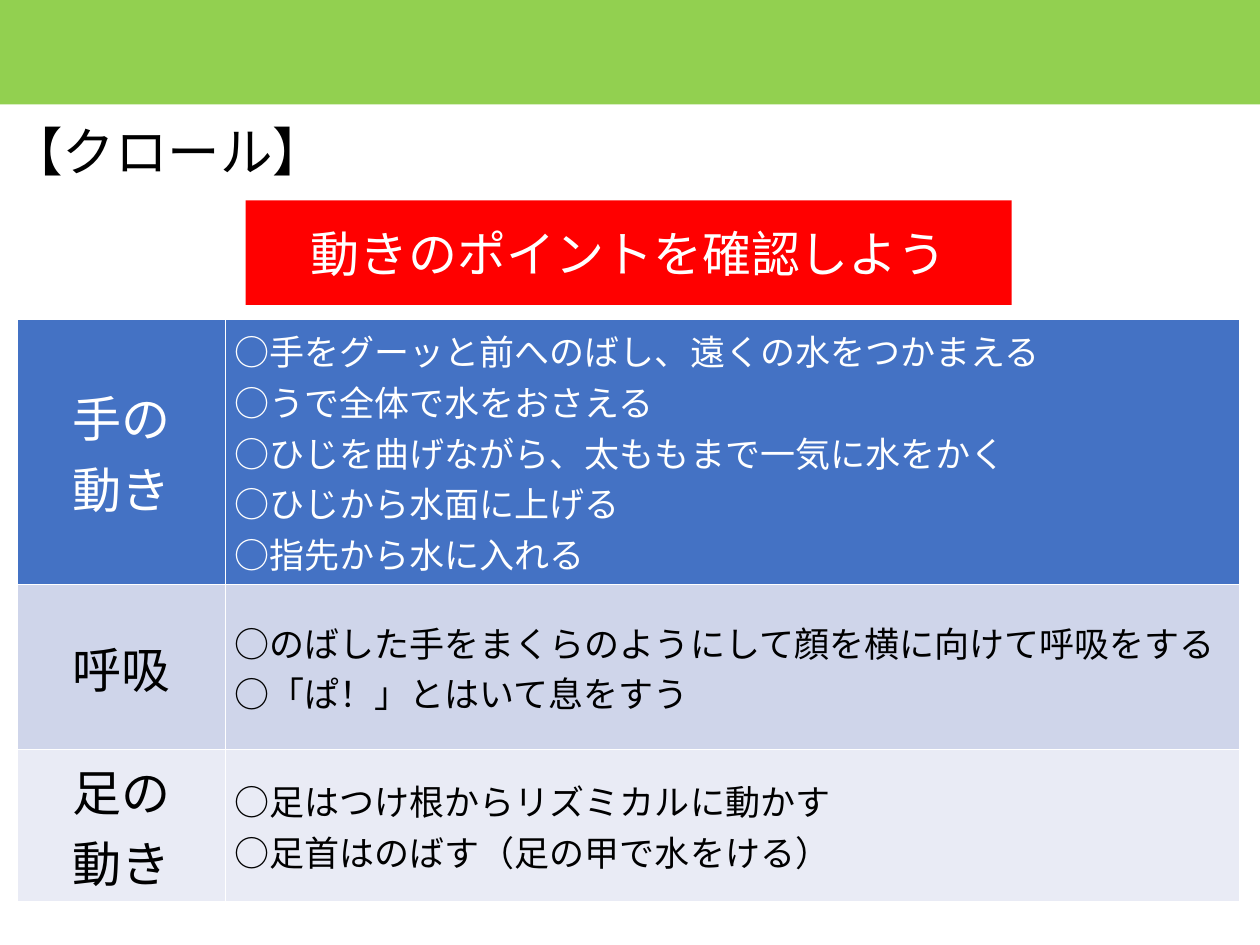
from lxml.etree import SubElement
from pptx import Presentation
from pptx.dml.color import RGBColor
from pptx.enum.shapes import MSO_SHAPE
from pptx.enum.text import MSO_ANCHOR, MSO_AUTO_SIZE, PP_ALIGN
from pptx.oxml.ns import qn
from pptx.util import Inches, Pt

FONT = "Noto Sans CJK JP"
COLORS = {"green": "92D050", "red": "FF0000", "blue": "4472C4",
          "pale": "CFD5EA", "paler": "E9EBF5", "white": "FFFFFF", "black": "000000"}

STROKE = "【クロール】"
CALL = "動きのポイントを確認しよう"
POINTS = [  # heading lines, point lines, row height, fill, text colour
    (["手の", "動き"],
     ["○手をグーッと前へのばし、遠くの水をつかまえる",
      "○うで全体で水をおさえる",
      "○ひじを曲げながら、太ももまで一気に水をかく",
      "○ひじから水面に上げる",
      "○指先から水に入れる"], 2.11, "blue", "white"),
    (["呼吸"],
     ["○のばした手をまくらのようにして顔を横に向けて呼吸をする",
      "○「ぱ！」とはいて息をすう"], 1.31, "pale", "black"),
    (["足の", "動き"],
     ["○足はつけ根からリズミカルに動かす",
      "○足首はのばす（足の甲で水をける）"], 1.15, "paler", "black"),
]
COLUMN_WIDTHS = (1.65, 8.05)


def rgb(name):
    return RGBColor.from_string(COLORS[name])


def write(frame, lines, size, color, align=PP_ALIGN.LEFT):
    frame.word_wrap = True
    for number, line in enumerate(lines):
        paragraph = frame.paragraphs[0] if number == 0 else frame.add_paragraph()
        paragraph.alignment = align
        run = paragraph.add_run()
        run.text = line
        run.font.size = Pt(size)
        run.font.bold = False
        run.font.name = FONT
        run.font.color.rgb = rgb(color)
        # Japanese characters take the East Asian typeface
        SubElement(run.font._element, qn("a:ea"), typeface=FONT)


def add_band(slide, left, top, width, height, color):
    band = slide.shapes.add_shape(MSO_SHAPE.RECTANGLE, Inches(left), Inches(top),
                                  Inches(width), Inches(height))
    band.shadow.inherit = False
    band.fill.solid()
    band.fill.fore_color.rgb = rgb(color)
    band.line.fill.background()
    return band


def add_title(slide):
    title = slide.shapes.title
    title.left, title.top = Inches(-0.02), Inches(0.92)
    title.width, title.height = Inches(3.16), Inches(0.55)
    title.fill.solid()
    title.fill.fore_color.rgb = rgb("white")
    title.text_frame.auto_size = MSO_AUTO_SIZE.NONE
    title.text_frame.vertical_anchor = MSO_ANCHOR.MIDDLE
    write(title.text_frame, [STROKE], 30, "black")


def add_points(slide):
    table = slide.shapes.add_table(
        len(POINTS), len(COLUMN_WIDTHS), Inches(0.14), Inches(2.53),
        Inches(sum(COLUMN_WIDTHS)), Inches(sum(row[2] for row in POINTS))).table
    for column, width in zip(table.columns, COLUMN_WIDTHS):
        column.width = Inches(width)
    for row, (heading, points, height, fill, color) in zip(table.rows, POINTS):
        row.height = Inches(height)
        columns = ((heading, 28, PP_ALIGN.CENTER), (points, 20, PP_ALIGN.LEFT))
        for cell, (lines, size, align) in zip(row.cells, columns):
            cell.fill.solid()
            cell.fill.fore_color.rgb = rgb(fill)
            cell.vertical_anchor = MSO_ANCHOR.MIDDLE
            cell.margin_left = cell.margin_right = Inches(0.07)
            cell.margin_top = cell.margin_bottom = Inches(0.04)
            write(cell.text_frame, lines, size, color, align)


def main():
    deck = Presentation()
    deck.slide_width, deck.slide_height = Inches(10), Inches(7.5)
    slide = deck.slides.add_slide(deck.slide_layouts[5])
    add_title(slide)
    add_points(slide)
    call = add_band(slide, 1.95, 1.59, 6.08, 0.83, "red")
    call.text_frame.vertical_anchor = MSO_ANCHOR.MIDDLE
    write(call.text_frame, [CALL], 28, "white", PP_ALIGN.CENTER)
    add_band(slide, -0.02, 0, 10.02, 0.83, "green")
    deck.save("out.pptx")


if __name__ == "__main__":
    main()
